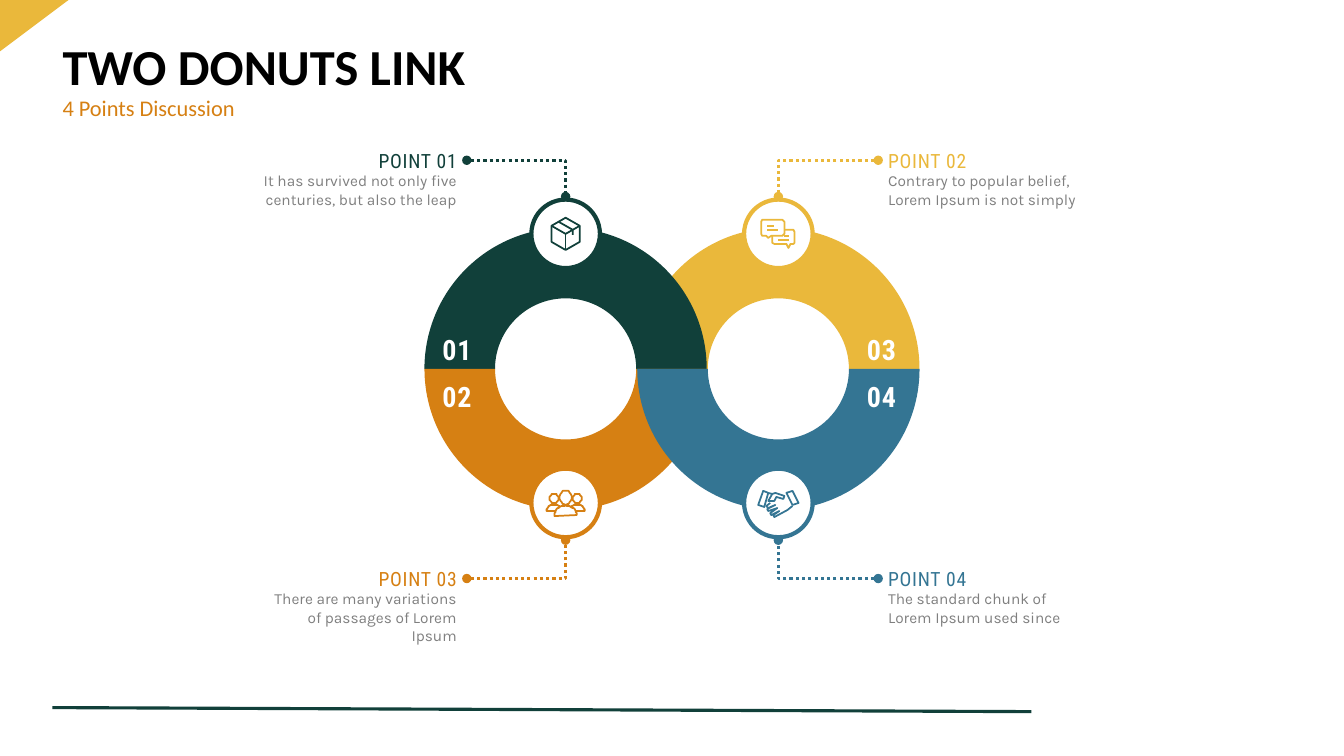
from math import cos, pi, sin

from lxml import etree
from pptx import Presentation
from pptx.dml.color import RGBColor
from pptx.enum.dml import MSO_LINE
from pptx.enum.shapes import MSO_CONNECTOR, MSO_SHAPE
from pptx.enum.text import MSO_ANCHOR, MSO_AUTO_SIZE, PP_ALIGN
from pptx.oxml.ns import qn
from pptx.util import Inches, Pt

ARC, OVAL, CORNER = MSO_SHAPE.BLOCK_ARC, MSO_SHAPE.OVAL, MSO_SHAPE.RIGHT_TRIANGLE
STRAIGHT, ELBOW, DOTS = MSO_CONNECTOR.STRAIGHT, MSO_CONNECTOR.ELBOW, MSO_LINE.ROUND_DOT
LEFT, RIGHT, MIDDLE = PP_ALIGN.LEFT, PP_ALIGN.RIGHT, MSO_ANCHOR.MIDDLE
FIXED = MSO_AUTO_SIZE.NONE
GREEN, GOLD, ORANGE, BLUE = "11403A", "EAB83B", "D68013", "347593"
WHITE, GREY, BLACK = "FFFFFF", "7F7F7F", "000000"
color = RGBColor.from_string

# Icon strokes in hundredths of an inch from the badge centre: (points, closed)
box = [
    ([(0, 16), (-14, 8), (-14, -8), (0, -16), (14, -8), (14, 8)], True),
    ([(-14, -8), (0, 0), (14, -8)], False),
    ([(0, 0), (0, 16)], False),
    ([(-7, -12), (7, -4), (7, 1)], False),
]
chat = [
    ([(-5, -4), (15, -4), (16.5, -2.5), (16.5, 9), (15, 10.5), (12.5, 10.5),
      (10, 13.5), (7.5, 10.5), (-4, 10.5), (-5.5, 9), (-5.5, -3)], True),
    ([(-15.5, -14), (4.5, -14), (6, -12.5), (6, 0), (4.5, 1.5), (-7, 1.5),
      (-10, 4.5), (-12.5, 1.5), (-15.5, 1.5), (-17, 0), (-17, -12.5)], True),
    ([(-11, -8.5), (-4, -8.5)], False),
    ([(-11, -4), (0, -4)], False),
    ([(6, 1.5), (11, 1.5)], False),
    ([(0, 5.5), (11, 5.5)], False),
]
shake = [
    ([(-19.5, 1.5), (-15, -11.5), (-10.5, -9.5), (-14.5, 3.5)], True),
    ([(8.5, -9.5), (13.5, -11.5), (19.5, 0.5), (14.5, 2.5)], True),
    ([(-10.5, -9.5), (-6, -9.3), (-3, -10.5), (6.5, -7), (5, -4.5), (-1.5, -6.5),
      (-4, -2.5), (-9.5, -2), (-6, -9.3)], False),
    ([(13.5, 3), (9, 7), (-3.5, 13.5), (-5, 12), (1, 7.5), (-7, 11.5), (-8.5, 9.5),
      (-1, 5), (-9.5, 8.5), (-11, 6.5), (-3, 2), (-10, 5), (-11.5, 3), (-7.5, 0.5)],
     False),
    ([(-16.2, -0.5), (-15.8, -0.5)], False),
    ([(15.8, -0.5), (16.2, -0.5)], False),
]
people = []
for x, y, wide, high, sweep in [
    (-11.5, 8, 7.5, 6.5, pi), (11.5, 8, 7.5, 6.5, pi),
    (-11.5, -4.5, 4.2, 4.8, 2 * pi), (11.5, -4.5, 4.2, 4.8, 2 * pi),
    (0, 12.5, 11, 10, pi), (0, -5.5, 6, 7, 2 * pi),
]:
    turns = [pi + sweep * step / 24 for step in range(25)]
    people.append(([(x + wide * cos(t), y + high * sin(t)) for t in turns], True))

# Heading, text, number, colour, column, row, icon
points = [
    ("POINT 02", "Contrary to popular belief, Lorem Ipsum is not simply",
     "03", GOLD, 1, 0, chat),
    ("POINT 01", "It has survived not only five centuries, but also the leap",
     "01", GREEN, 0, 0, box),
    ("POINT 03", "There are many variations of passages of Lorem Ipsum",
     "02", ORANGE, 0, 1, people),
    ("POINT 04", "The standard chunk of \vLorem Ipsum used since",
     "04", BLUE, 1, 1, shake),
]


def style(frame, text, size, face, tint, bold=False, align=LEFT, track=0):
    """Fill a text frame with one formatted paragraph; track is in points."""
    frame.word_wrap = True
    frame.auto_size = FIXED
    para = frame.paragraphs[0]
    para.text = text
    para.alignment = align
    for run in para.runs:
        font = run.font
        font.size, font.name, font.bold = Pt(size), face, bold
        font.color.rgb = color(tint)
        if track:
            font._element.set("spc", str(int(track * 100)))
    return para


def place(kind, left, top, width, height, fill):
    item = shapes.add_shape(kind, Inches(left), Inches(top), Inches(width), Inches(height))
    item.shadow.inherit = False
    item.fill.solid()
    item.fill.fore_color.rgb = color(fill)
    item.line.fill.background()
    return item


deck = Presentation()
deck.slide_width, deck.slide_height = Inches(13.33), Inches(7.5)
slide = deck.slides.add_slide(deck.slide_layouts[2])
shapes = slide.shapes

rule = shapes.add_connector(STRAIGHT, Inches(0.52), Inches(7.02), Inches(10.23), Inches(7.06))
rule.line.color.rgb = color(GREEN)
rule.line.width = Pt(2.25)
etree.SubElement(rule._element.spPr, qn("a:effectLst"))
corner = place(CORNER, 0, 0, 0.68, 0.51, GOLD)
corner._element.spPr.find(qn("a:xfrm")).set("flipV", "1")

for holder, top, height, text, size, tint, bold in [
    (shapes.title, 0.39, 0.6, "TWO DONUTS LINK", 36, BLACK, True),
    (slide.placeholders[1], 0.89, 0.39, "4 Points Discussion", 16, ORANGE, False),
]:
    holder.left, holder.top = Inches(0.52), Inches(top)
    holder.width, holder.height = Inches(12.29), Inches(height)
    holder.text_frame.vertical_anchor = MIDDLE
    para = style(holder.text_frame, text, size, "Calibri", tint, bold)
    para.line_spacing = 0.9
    para.space_before = Pt(0)

for head, body, number, tint, col, row, icon in points:
    mid = 5.61 + 2.11 * col
    hub = 2.32 + 2.67 * row

    ring = place(ARC, mid - 1.4, 2.26, 2.8, 2.8, tint)
    ring.rotation = 180 * row

    side = LEFT if col else RIGHT
    drop = 4.15 * row
    for text, left, top, width, height, size, face, ink, bold, align, track in [
        (head, (2.6, 8.71)[col], 1.43 + drop, 2.03, 0.33, 14,
         "Roboto Condensed", tint, False, side, 0.5),
        (body, (2.47, 8.71)[col], 1.65 + drop, 2.16, 0.46, 11,
         "Karla", GREY, False, side, 0),
        (number, 4.29 + 4.21 * col, 3.25 + 0.47 * row, 0.52, 0.42, 20,
         "Roboto Condensed", WHITE, True, LEFT, 0.5),
    ]:
        area = shapes.add_textbox(Inches(left), Inches(top), Inches(width), Inches(height))
        style(area.text_frame, text, size, face, ink, bold, align, track)

    badge = place(OVAL, mid - 0.34, hub - 0.34, 0.68, 0.68, WHITE)
    badge.line.color.rgb = color(tint)
    badge.line.width = Pt(3)

    link = shapes.add_connector(
        ELBOW, Inches((4.63, 8.71)[col]), Inches(1.59 + drop),
        Inches(mid), Inches((1.95, 5.36)[row]))
    link._element.spPr.find(qn("a:prstGeom")).set("prst", "bentConnector2")
    link.line.color.rgb = color(tint)
    link.line.width = Pt(2.25)
    link.line.dash_style = DOTS
    for end in ("a:headEnd", "a:tailEnd"):
        etree.SubElement(link.line._ln, qn(end)).set("type", "oval")
    etree.SubElement(link._element.spPr, qn("a:effectLst"))

    for path, closed in icon:
        pen = shapes.build_freeform(*path[0], scale=Inches(0.01))
        pen.add_line_segments(path[1:], close=closed)
        stroke = pen.convert_to_shape(Inches(mid), Inches(hub))
        stroke.shadow.inherit = False
        if closed:
            stroke.fill.solid()
            stroke.fill.fore_color.rgb = color(WHITE)
        else:
            stroke.fill.background()
        stroke.line.color.rgb = color(tint)
        stroke.line.width = Pt(1.25)

deck.save("out.pptx")
